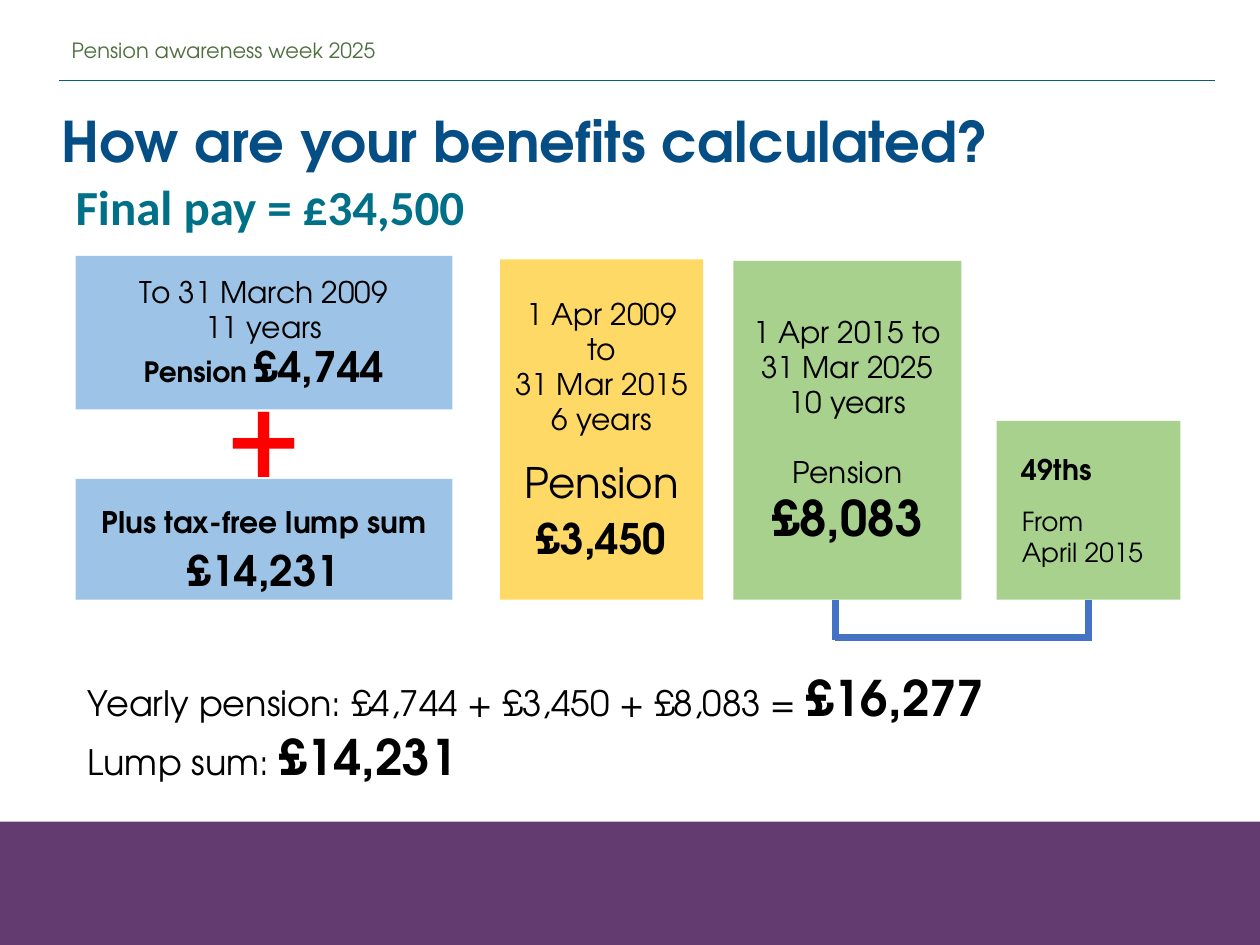
"""Build the pension benefits calculation slide."""
from lxml import etree
from pptx import Presentation
from pptx import util as u
from pptx.dml.color import RGBColor
from pptx.enum import shapes, text
from pptx.oxml.ns import qn

COLUMNS, ROWS = 100, 75
CELL = u.Inches(0.1)
FONT = "TeX Gyre Adventor"
COLORS = {
    "ink": "000000", "header": "4F7040", "rule": "0B5E74", "title": "044D85",
    "pay": "007088", "plus": "FF0000", "final_salary": "9DC3E6",
    "middle_scheme": "FFD966", "career_average": "A9D18E",
    "bracket": "4472C4", "footer": "633B71",
}
CENTER, LEFT = text.PP_ALIGN.CENTER, text.PP_ALIGN.LEFT
TOP, MIDDLE = text.MSO_ANCHOR.TOP, text.MSO_ANCHOR.MIDDLE
DEFAULT_INSETS = (1, 0.5, 1, 0.5)
NO_INSETS = (0, 0, 0, 0)


def grid(*cells):
    """Turn grid counts into slide lengths."""
    return [round(count * CELL) for count in cells]


def rgb(name):
    """Look up a named colour."""
    return RGBColor.from_string(COLORS[name])


def line(*runs, before=0, after=0, spacing=None):
    """Describe one paragraph; each run is (words, size, bold, baseline)."""
    return runs, before, after, spacing


def fixed(words, size=17, bold=False, **gaps):
    """Describe a one-run paragraph on the 20 point line pitch."""
    return line((words, size, bold), spacing=u.Pt(20), **gaps)


def write(holder, lines, color="ink", font=FONT, align=LEFT, anchor=TOP,
          insets=DEFAULT_INSETS):
    """Fill a shape's text frame with described paragraphs."""
    frame = holder.text_frame
    frame.word_wrap = True
    frame.vertical_anchor = anchor
    (frame.margin_left, frame.margin_top,
     frame.margin_right, frame.margin_bottom) = grid(*insets)
    for index, (runs, before, after, spacing) in enumerate(lines):
        paragraph = frame.add_paragraph() if index else frame.paragraphs[0]
        paragraph.alignment = align
        paragraph.space_before, paragraph.space_after = u.Pt(before), u.Pt(after)
        paragraph.line_spacing = spacing
        for words, size, bold, *baseline in runs:
            if words == "\n":
                paragraph.add_line_break()
                continue
            run = paragraph.add_run()
            run.text = words
            run.font.name, run.font.size, run.font.bold = font, u.Pt(size), bold
            run.font.color.rgb = rgb(color)
            if baseline:
                run.font._element.set("baseline", str(baseline[0]))


def label(slide, box, lines, **style):
    """Place free text in a box."""
    write(slide.shapes.add_textbox(*grid(*box)), lines, **style)


def panel(slide, box, fill, lines=(), **style):
    """Place a flat coloured rectangle with its text."""
    block = slide.shapes.add_shape(shapes.MSO_SHAPE.RECTANGLE, *grid(*box))
    block.shadow.inherit = False
    block.fill.solid()
    block.fill.fore_color.rgb = rgb(fill)
    block.line.fill.background()
    write(block, lines, **style)


def stroke(slide, ends, color, width):
    """Draw a straight line between two grid points."""
    rule = slide.shapes.add_connector(shapes.MSO_CONNECTOR.STRAIGHT, *grid(*ends))
    rule.line.color.rgb = rgb(color)
    rule.line.width = u.Pt(width)
    etree.SubElement(rule._element.spPr, qn("a:effectLst"))


def heading(slide, left, top, width):
    """Place the running header, its rule, the title and the final pay."""
    stroke(slide, (left, top + 3.7, left + width, top + 3.7), "rule", 0.5)
    label(slide, (left, top, 65, 2.5),
          [line(("Pension awareness week 2025", 12, False), spacing=0.9)],
          color="header")
    label(slide, (left - 0.8, top + 5.3, 93.3, 6.4),
          [line(("How are your benefits calculated?", 32, True))], color="title")
    label(slide, (left + 1.3, top + 11.3, 67, 4.7),
          [line(("Final pay = £34,500", 28, True))],
          color="pay", font="Calibri", insets=NO_INSETS)


def final_salary(slide, left, top, width, bottom):
    """Place the pension and lump sum earned up to 2009."""
    pension_height, lump_height = 12.2, 9.6
    panel(slide, (left, top, width, pension_height), "final_salary", [
        fixed("To 31 March 2009"),
        fixed("11 years", after=6),
        line(("Pension ", 16, True), ("£4,744", 24, True), spacing=u.Pt(20)),
    ], align=CENTER, anchor=MIDDLE, insets=NO_INSETS)
    label(slide, (left, top + 11.8, width, 5), [line(("+", 72, False))],
          color="plus", font="Roboto", align=CENTER, anchor=MIDDLE)
    panel(slide, (left, bottom - lump_height, width, lump_height), "final_salary", [
        fixed("Plus tax-free lump sum", bold=True),
        fixed("£14,231", 24, True, before=12),
    ], align=CENTER, insets=(0, 2, 0, 0))


def middle_scheme(slide, left, top, width, bottom):
    """Place the pension earned from 2009 to 2015."""
    panel(slide, (left, top, width, bottom - top), "middle_scheme", [
        line(("1 Apr 2009 to", 17, False), ("\n", 17, False),
             ("31 Mar 2015", 17, False), spacing=u.Pt(20)),
        fixed("6 years"),
        fixed("Pension", 24, before=20, after=12),
        fixed("£3,450", 24, True, after=12),
    ], align=CENTER, anchor=MIDDLE)


def career_average(slide, left, top, width, bottom):
    """Place the pension earned from 2015, its accrual rate and the bracket."""
    panel(slide, (left, top, width, bottom - top), "career_average", [
        fixed("1 Apr 2015 to"),
        fixed("31 Mar 2025"),
        fixed("10 years"),
        fixed("Pension", before=20, after=12),
        fixed("£8,083", 28, True),
    ], align=CENTER, anchor=MIDDLE)
    rate_left, rate_width, rate_height = left + 20.9, 14.6, 14.2
    panel(slide, (rate_left, bottom - rate_height, rate_width, rate_height),
          "career_average", [
              line(("49ths", 28, True, 30000), ("\n", 28, True),
                   ("From", 15, False), ("\n", 15, False),
                   ("April 2015", 15, False)),
          ], insets=(2, 2, 2, 2))
    start, end, base = left + 8.1, rate_left + rate_width / 2, bottom + 3
    for side in (start, end):
        stroke(slide, (side, base + 0.2, side, bottom), "bracket", 4)
    stroke(slide, (start, base, end + 0.3, base), "bracket", 4)


def totals(slide, left, top, width, height):
    """Place the yearly pension and lump sum results."""
    results = (("Yearly pension: £4,744 + £3,450 + £8,083 = ", "£16,277"),
               ("Lump sum: ", "£14,231"))
    label(slide, (left, top, width, height),
          [line((words, 20, False), (amount, 28, True)) for words, amount in results])


def main():
    """Assemble and save the slide."""
    deck = Presentation()
    deck.slide_width, deck.slide_height = grid(COLUMNS, ROWS)
    slide = deck.slides.add_slide(deck.slide_layouts[6])
    footer_top, bottom = 65.2, 47.6
    panel(slide, (0, footer_top, COLUMNS, ROWS - footer_top), "footer")
    heading(slide, 4.7, 2.7, 91.7)
    final_salary(slide, 6, 20.3, 29.9, bottom)
    middle_scheme(slide, 39.7, 20.6, 16.1, bottom)
    career_average(slide, 58.2, 20.7, 18.1, bottom)
    totals(slide, 6, 52.5, 80.6, 10.4)
    deck.save("out.pptx")


if __name__ == "__main__":
    main()
